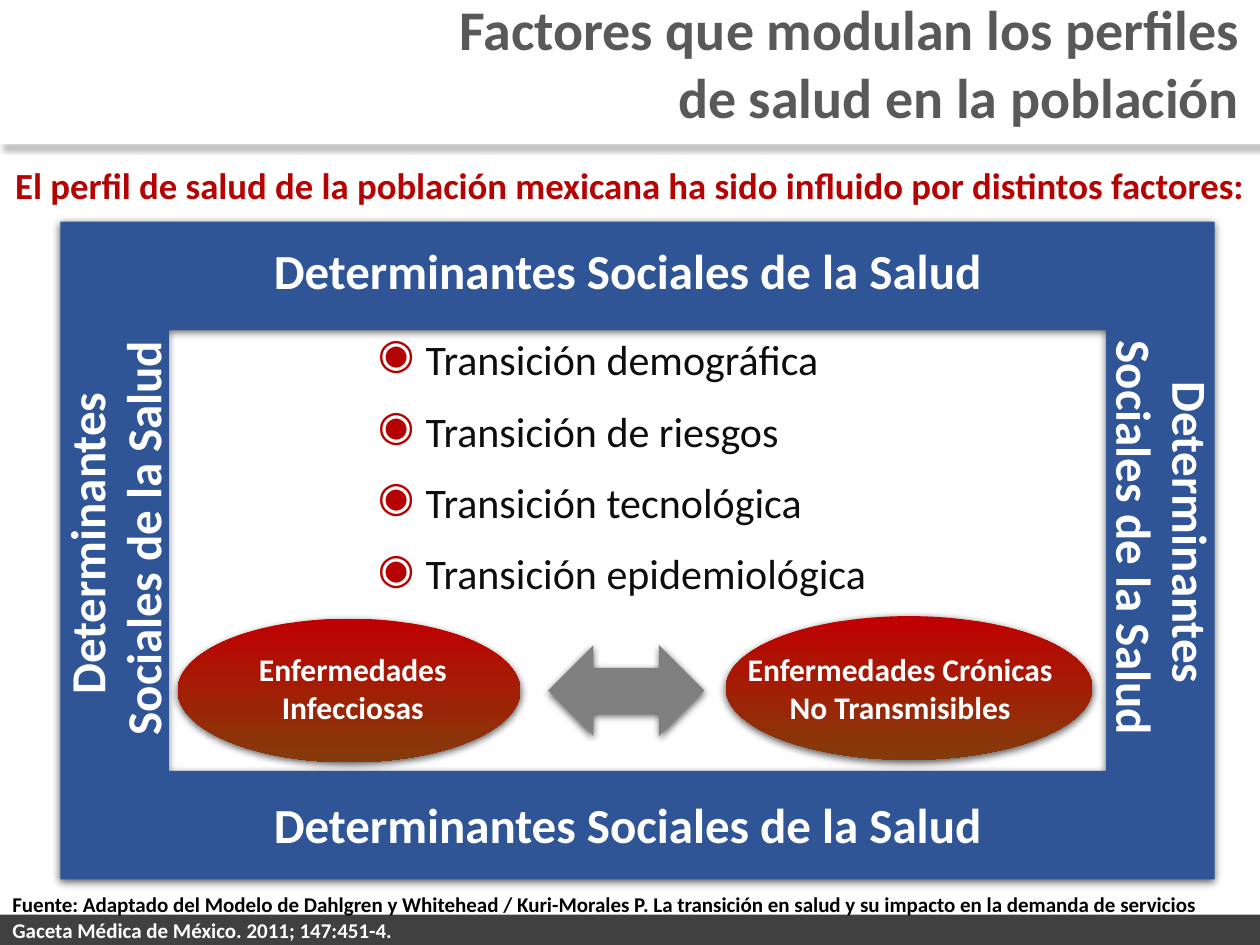
from lxml import etree
from pptx import Presentation
from pptx.dml.color import RGBColor
from pptx.enum.shapes import MSO_CONNECTOR, MSO_SHAPE as Shape
from pptx.enum.text import PP_ALIGN as Align
from pptx.oxml.ns import qn
from pptx.util import Inches, Pt

FONT = "Calibri"
WHITE, RED, BLUE = "FFFFFF", "B50202", "2F5597"
SOFT = dict(alpha=63, blur=4.5, dist=1.5, angle=90)
RULE = dict(alpha=40, blur=4, dist=3, angle=45)


def rgb(color):
    return RGBColor.from_string(color)


def child(parent, tag, **attrs):
    return etree.SubElement(parent, qn(tag), {k: str(v) for k, v in attrs.items()})


def add_shadow(effects, alpha, blur, dist, angle):
    outer = child(effects, "a:outerShdw", blurRad=Pt(blur), dist=Pt(dist),
                  dir=angle * 60000, algn="ctr", rotWithShape=0)
    color = child(outer, "a:srgbClr", val="000000")
    child(color, "a:alpha", val=alpha * 1000)


def add_filled(s, kind, box, fill, shadow=None):
    sp = s.shapes.add_shape(kind, *map(Inches, box))
    sp.shadow.inherit = False
    sp.line.fill.background()
    if isinstance(fill, str):
        sp.fill.solid()
        sp.fill.fore_color.rgb = rgb(fill)
    else:
        sp.fill.gradient()
        sp.fill.gradient_angle = 270
        for stop, color in zip(sp.fill.gradient_stops, fill):
            stop.color.rgb = rgb(color)
    if shadow:
        add_shadow(sp._element.spPr.find(qn("a:effectLst")), **shadow)
    return sp


def add_rule(s, y):
    line = s.shapes.add_connector(MSO_CONNECTOR.STRAIGHT, 0, Inches(y), Inches(10), Inches(y))
    line.line.color.rgb = rgb(WHITE)
    line.line.width = Pt(3)
    add_shadow(child(line._element.spPr, "a:effectLst"), **RULE)


def add_box(s, box, rotation=0):
    sp = s.shapes.add_textbox(*map(Inches, box))
    sp.rotation = rotation
    sp.text_frame.word_wrap = True
    return sp.text_frame


def add_run(p, text, size, color, bold=True, shadow=None):
    r = p.add_run()
    r.text = text
    if shadow:
        add_shadow(child(r._r.get_or_add_rPr(), "a:effectLst"), **shadow)
    r.font.size = Pt(size)
    r.font.bold = bold
    r.font.color.rgb = rgb(color)
    r.font.name = FONT


def add_label(s, box, text, size, color, align=Align.CENTER, shadow=None):
    p = add_box(s, box).paragraphs[0]
    p.alignment = align
    add_run(p, text, size, color, shadow=shadow)


def add_side_label(s, box, rotation, lines):
    p = add_box(s, box, rotation).paragraphs[0]
    p.alignment = Align.CENTER
    p.line_spacing = Pt(32)
    for i, text in enumerate(lines):
        if i:
            p.add_line_break()
        add_run(p, text, 28, WHITE)


def add_bullets(s, box, items):
    tf = add_box(s, box)
    for i, text in enumerate(items):
        p = tf.add_paragraph() if i else tf.paragraphs[0]
        p.alignment = Align.JUSTIFY
        if i:
            p.space_before = Pt(12)
        pPr = p._p.get_or_add_pPr()
        pPr.set("marL", str(Inches(2.38)))
        pPr.set("indent", str(Inches(-0.38)))
        child(child(pPr, "a:buClr"), "a:srgbClr", val=RED)
        child(pPr, "a:buChar", char="◉")
        add_run(p, text, 24, "0D0D0D", bold=False)


def add_disease(s, oval, box, text):
    add_filled(s, Shape.OVAL, oval, ("C00000", "843C0B"), SOFT)
    add_label(s, box, text, 18, WHITE, shadow=SOFT)


def add_source(s, box, parts):
    p = add_box(s, box).paragraphs[0]
    for text, color in parts:
        add_run(p, text, 12, color)


def main():
    prs = Presentation()
    prs.slide_width, prs.slide_height = Inches(10), Inches(7.5)
    s = prs.slides.add_slide(prs.slide_layouts[6])

    add_filled(s, Shape.RECTANGLE, (0, 7.26, 10, 0.24), "404040")
    add_rule(s, 1.12)
    add_label(s, (3.23, -0.09, 6.71, 1.18),
              "Factores que modulan los perfiles de salud en la población",
              32, "595959", Align.RIGHT)
    add_bullets(s, (0.9, 2.6, 8.12, 2.22),
                [f"Transición {kind}" for kind in
                 ("demográfica", "de riesgos", "tecnológica", "epidemiológica")])

    add_disease(s, (1.41, 4.91, 2.72, 1.14), (1.74, 5.11, 2.12, 0.71),
                "Enfermedades Infecciosas")
    add_disease(s, (5.76, 4.89, 2.91, 1.14), (5.81, 5.11, 2.67, 0.71),
                "Enfermedades Crónicas No Transmisibles")
    add_filled(s, Shape.LEFT_RIGHT_ARROW, (4.35, 5.12, 1.24, 0.72), "808080", SOFT)

    add_label(s, (0, 1.24, 10, 0.45),
              "El perfil de salud de la población mexicana ha sido influido por distintos factores:",
              21, RED)

    frame = add_filled(s, Shape.FRAME, (0.48, 1.76, 9.16, 5.22), BLUE, SOFT)
    frame.adjustments[0] = 0.165
    for y in (1.86, 6.26):
        add_label(s, (0.32, y, 9.32, 0.55), "Determinantes Sociales de la Salud", 28, WHITE)
    for x, rotation in ((-1.69, 270), (6.61, 90)):
        add_side_label(s, (x, 3.77, 5.22, 1), rotation,
                       ("Determinantes ", "Sociales de la Salud"))

    add_source(s, (0, 7.03, 9.94, 0.5), (
        ("Fuente: Adaptado del Modelo de Dahlgren y Whitehead / Kuri-Morales P. "
         "La transición en salud y su impacto en la demanda de servicios", "000000"),
        (". Gaceta Médica de México. 2011; 147:451-4.", WHITE)))
    prs.save("out.pptx")


if __name__ == "__main__":
    main()
